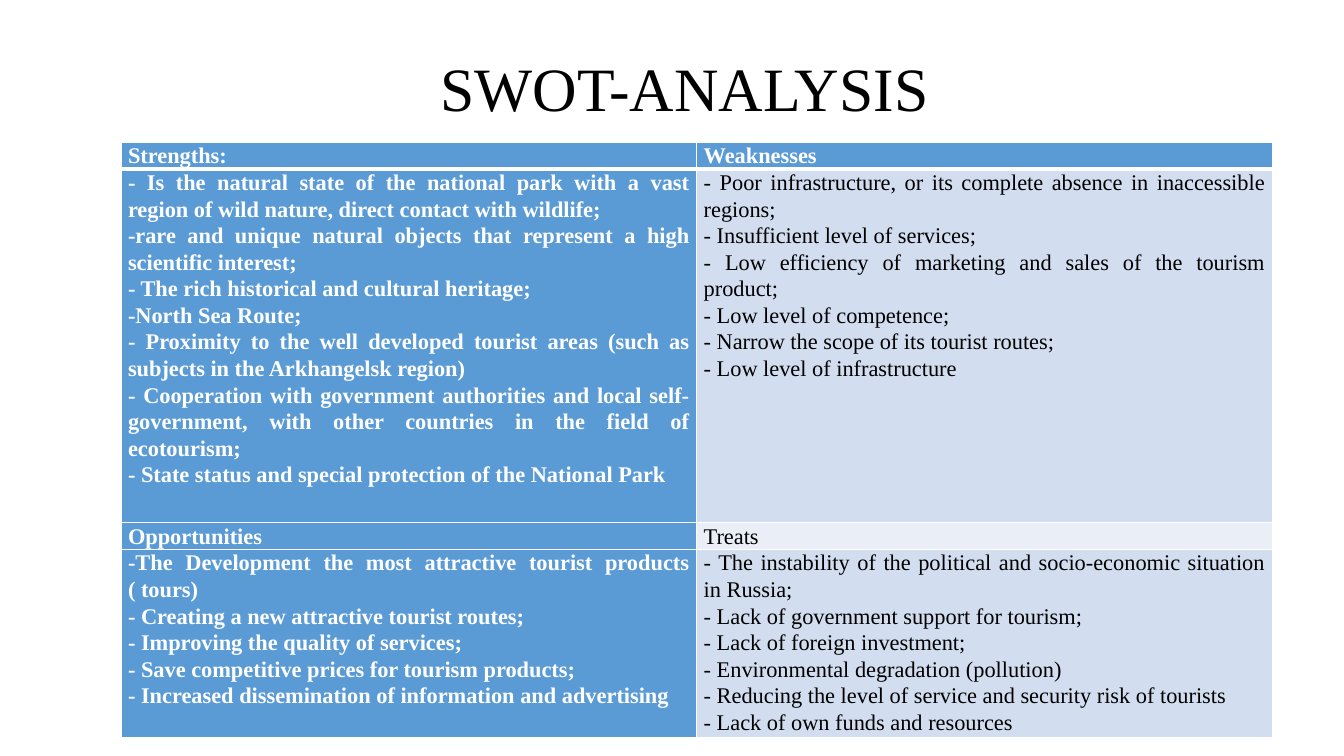
from dataclasses import dataclass

from lxml import etree
from pptx import Presentation
from pptx.dml.color import RGBColor
from pptx.enum.text import MSO_ANCHOR, MSO_AUTO_SIZE, PP_ALIGN
from pptx.oxml.ns import qn
from pptx.util import Inches, Pt

LEFT, JUSTIFY = PP_ALIGN.LEFT, PP_ALIGN.JUSTIFY
MIDDLE, TOP = MSO_ANCHOR.MIDDLE, MSO_ANCHOR.TOP
NO_AUTOFIT = MSO_AUTO_SIZE.NONE


@dataclass(frozen=True)
class Theme:
    font: str = "Times New Roman"
    title_size: int = 44
    table_size: int = 16
    black: str = "000000"
    white: str = "FFFFFF"
    blue: str = "5B9BD5"
    light_band: str = "D2DEEF"
    pale_band: str = "EAEFF7"


THEME = Theme()
ROW_HEIGHTS = [0.23, 3.51, 0.23, 1.87]
COLUMN_WIDTH = 5.71
BAND_FILLS = [THEME.blue, THEME.light_band, THEME.pale_band, THEME.light_band]

SWOT_ROWS = [
    (["Strengths:"], ["Weaknesses"]),
    (
        [
            "- Is the natural state of the national park with a vast region of wild nature, direct contact with wildlife;",
            "-rare and unique natural objects that represent a high scientific interest;",
            "- The rich historical and cultural heritage;",
            "-North Sea Route;",
            "- Proximity to the well developed tourist areas (such as subjects in the Arkhangelsk region)",
            "- Cooperation with government authorities and local self-government, with other countries in the field of ecotourism;",
            "- State status and special protection of the National Park",
        ],
        [
            "- Poor infrastructure, or its complete absence in inaccessible regions;",
            "- Insufficient level of services;",
            "- Low efficiency of marketing and sales of the tourism product;",
            "- Low level of competence;",
            "- Narrow the scope of its tourist routes;",
            "- Low level of infrastructure",
        ],
    ),
    (["Opportunities"], ["Treats"]),
    (
        [
            "-The Development the most attractive tourist products ( tours)",
            "- Creating a new attractive tourist routes;",
            "- Improving the quality of services;",
            "- Save competitive prices for tourism products;",
            "- Increased dissemination of information and advertising",
        ],
        [
            "- The instability of the political and socio-economic situation in Russia;",
            "- Lack of government support for tourism;",
            "- Lack of foreign investment;",
            "- Environmental degradation (pollution)",
            "- Reducing the level of service and security risk of tourists",
            "- Lack of own funds and resources",
        ],
    ),
]


def format_paragraph(paragraph, size, color, bold, alignment, line_spacing):
    paragraph.alignment = alignment
    paragraph.line_spacing = line_spacing
    for run in paragraph.runs:
        run.font.name = THEME.font
        run.font.size = Pt(size)
        run.font.bold = bold
        run.font.color.rgb = RGBColor.from_string(color)


def set_borders(cell, widths):
    properties = cell._tc.get_or_add_tcPr()
    for index, (side, width) in enumerate(widths.items()):
        line = etree.Element(qn("a:" + side), w=str(Pt(width)))
        fill = etree.SubElement(line, qn("a:solidFill"))
        etree.SubElement(fill, qn("a:srgbClr"), val=THEME.white)
        properties.insert(index, line)


presentation = Presentation()
presentation.slide_width = Inches(13.33)
presentation.slide_height = Inches(7.5)
slide = presentation.slides.add_slide(presentation.slide_layouts[5])

title = slide.shapes.title
title.left, title.top = Inches(4.27), Inches(0.4)
title.width, title.height = Inches(8.15), Inches(1.02)
title.text_frame.text = "SWOT-ANALYSIS"
title.text_frame.auto_size = NO_AUTOFIT
title.text_frame.vertical_anchor = MIDDLE
format_paragraph(title.text_frame.paragraphs[0], THEME.title_size, THEME.black, False, LEFT, 0.9)

table = slide.shapes.add_table(
    len(SWOT_ROWS), 2, Inches(1.2), Inches(1.41),
    Inches(2 * COLUMN_WIDTH), Inches(sum(ROW_HEIGHTS)),
).table
table.first_col = True
for column in table.columns:
    column.width = Inches(COLUMN_WIDTH)

for row_index, row_texts in enumerate(SWOT_ROWS):
    table.rows[row_index].height = Inches(ROW_HEIGHTS[row_index])
    for column_index, lines in enumerate(row_texts):
        cell = table.cell(row_index, column_index)
        is_header = row_index == 0 or column_index == 0
        cell.margin_left = cell.margin_right = Inches(0.07)
        cell.margin_top = cell.margin_bottom = 0
        cell.vertical_anchor = TOP
        cell.fill.solid()
        cell.fill.fore_color.rgb = RGBColor.from_string(
            THEME.blue if is_header else BAND_FILLS[row_index])
        set_borders(cell, {
            "lnL": 1, "lnR": 1,
            "lnT": 3 if row_index == 1 else 1,
            "lnB": 3 if row_index == 0 else 1,
        })
        cell.text_frame.text = "\n".join(lines)
        for paragraph in cell.text_frame.paragraphs:
            format_paragraph(
                paragraph, THEME.table_size,
                THEME.white if is_header else THEME.black, is_header, JUSTIFY, 1.07)

presentation.save("out.pptx")
